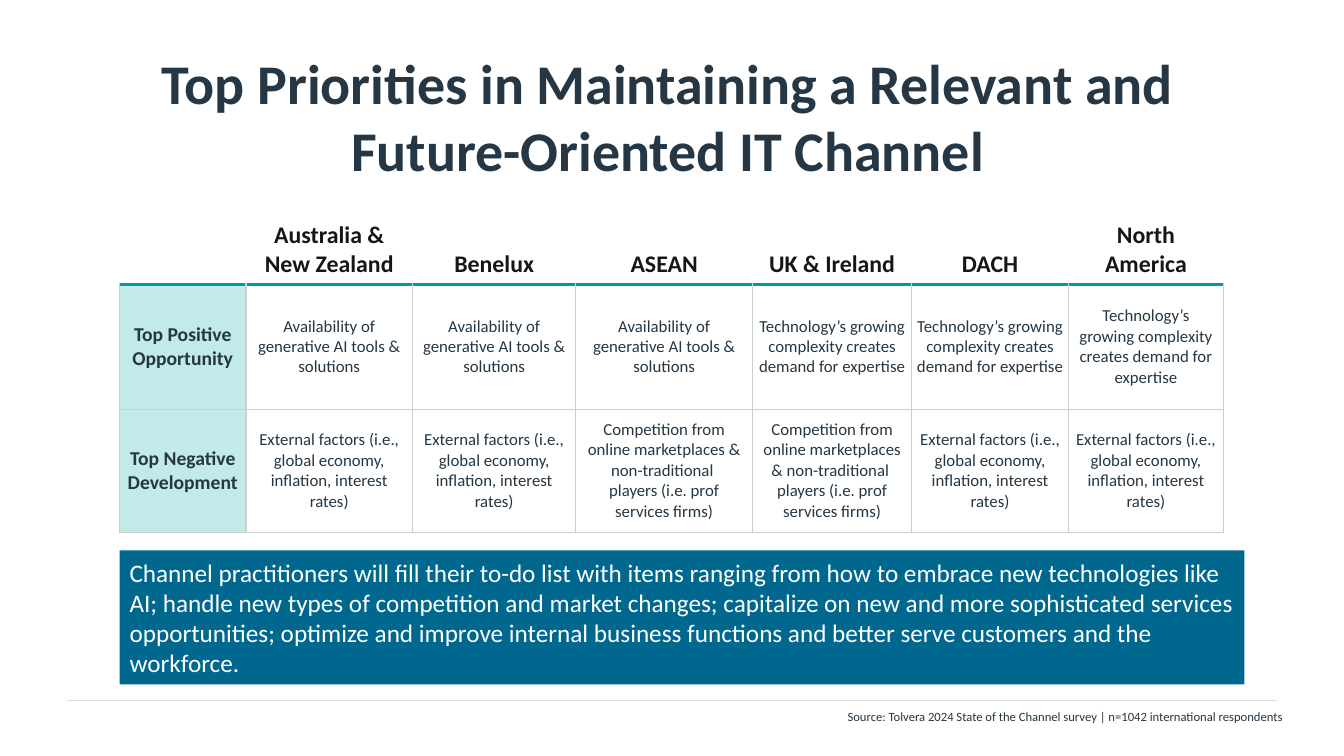
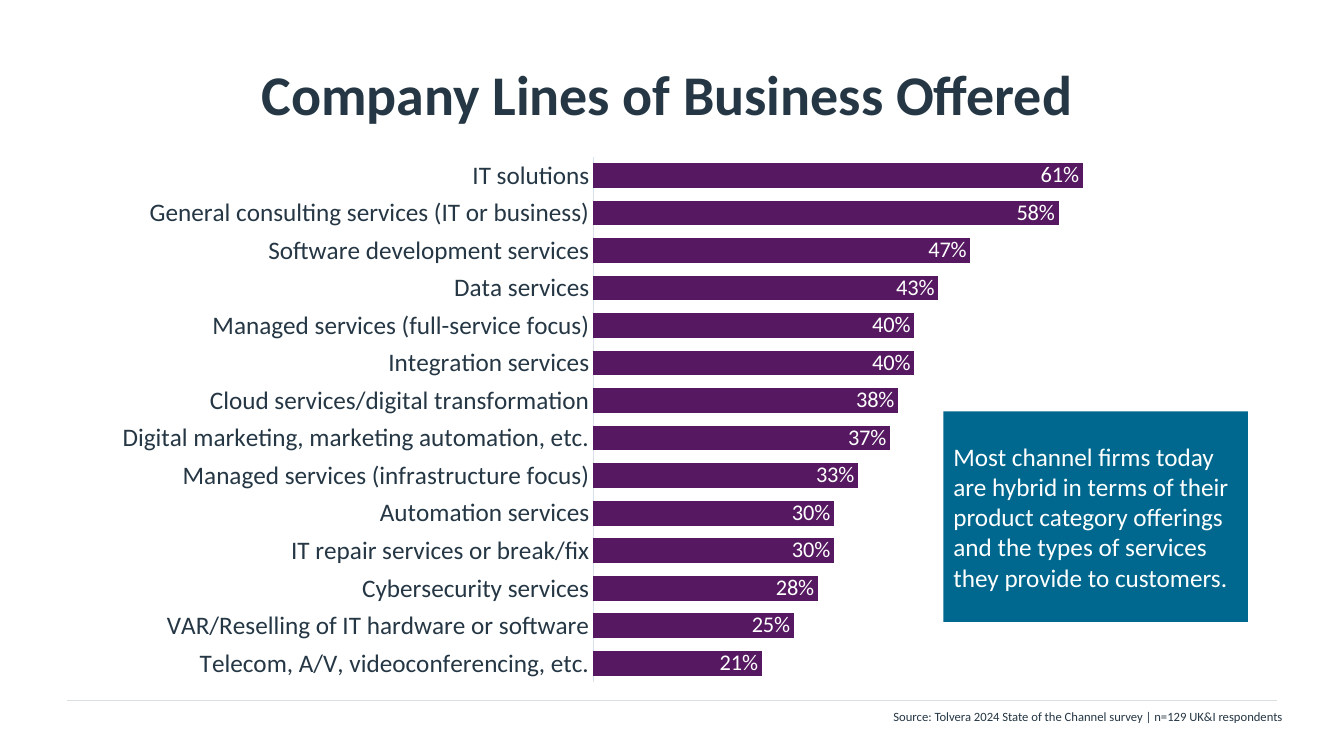
from lxml.etree import SubElement
from pptx import Presentation
from pptx.chart.data import CategoryChartData
from pptx.dml.color import RGBColor
from pptx.enum.chart import XL_CHART_TYPE, XL_LABEL_POSITION, XL_TICK_MARK
from pptx.enum.shapes import MSO_CONNECTOR, MSO_SHAPE
from pptx.enum.text import MSO_ANCHOR, MSO_AUTO_SIZE, PP_ALIGN
from pptx.oxml import parse_xml
from pptx.oxml.ns import nsdecls, qn
from pptx.util import Inches, Pt

FONT = "Calibri"
INK, BLACK, WHITE = "253644", "141718", "FEFFFE"
BLUE, TEAL, MINT, PURPLE = "00688E", "0198A7", "C1EAE9", "561961"
RULE_GREY, CELL_GREY, AXIS_GREY = "DADFE1", "C9CFD3", "D8E1EA"

prs = Presentation()
prs.slide_width, prs.slide_height = Inches(13.33), Inches(7.5)
COLUMN, ROW = prs.slide_width / 20, prs.slide_height / 30


def grid(*lengths):
    """Turn alternating column and row counts into slide lengths."""
    return [int(n * (ROW if i % 2 else COLUMN)) for i, n in enumerate(lengths)]


def paint(fill, colour):
    fill.solid()
    fill.fore_color.rgb = RGBColor.from_string(colour)


paint(prs.slide_master.background.fill, WHITE)

# Title, title box, source, callout, callout box
pages = [
    ("Top Priorities in Maintaining a Relevant and Future-Oriented IT Channel",
     (1.25, 2.08, 17.52, 5),
     "Source: Tolvera 2024 State of the Channel survey | n=1042 international respondents",
     "Channel practitioners will fill their to-do list with items ranging from how to "
     "embrace new technologies like AI; handle new types of competition and market "
     "changes; capitalize on new and more sophisticated services opportunities; optimize "
     "and improve internal business functions and better serve customers and the workforce.",
     (1.78, 21.84, 16.74, 5.32)),
    ("Company Lines of Business Offered",
     (1, 1.2, 18, 5),
     "Source: Tolvera 2024 State of the Channel survey | n=129 UK&I respondents",
     "Most channel firms today are hybrid in terms of their product category offerings "
     "and the types of services they provide to customers.",
     (14.04, 16.32, 4.53, 8.36)),
]

# Table of priorities by region
ai_tools = "Availability of generative AI tools & solutions"
complexity = "Technology’s growing complexity creates demand for expertise"
economy = "External factors (i.e., global economy, inflation, interest rates)"
competition = ("Competition from online marketplaces & non-traditional \v"
               "players (i.e. prof services firms)")
priorities = [
    ["", "Australia &\nNew Zealand", "Benelux", "ASEAN", "UK & Ireland", "DACH",
     "North America"],
    ["Top Positive Opportunity"] + [ai_tools] * 3 + [complexity] * 3,
    ["Top Negative Development"] + [economy] * 2 + [competition] * 2 + [economy] * 2,
]
region_widths = [1.88, 2.48, 2.43, 2.63, 2.37, 2.33, 2.31]
priority_heights = [4.2, 4.96, 4.88]

# Share of firms offering each line of business, lowest first
business_lines = {
    "Telecom, A/V, videoconferencing, etc.": 0.21,
    "VAR/Reselling of IT hardware or software": 0.25,
    "Cybersecurity services": 0.28,
    "IT repair services or break/fix": 0.30,
    "Automation services": 0.30,
    "Managed services (infrastructure focus)": 0.33,
    "Digital marketing, marketing automation, etc.": 0.37,
    "Cloud services/digital transformation": 0.38,
    "Integration services": 0.40,
    "Managed services (full-service focus)": 0.40,
    "Data services": 0.43,
    "Software development services": 0.47,
    "General consulting services (IT or business)": 0.58,
    "IT solutions": 0.61,
}

for page, (heading, heading_box, source_text, message, message_box) in enumerate(pages):
    slide = prs.slides.add_slide(prs.slide_layouts[5])
    shapes = slide.shapes

    rule = shapes.add_connector(MSO_CONNECTOR.STRAIGHT, *grid(1, 27.8, 19, 27.8))
    paint(rule.line.fill, RULE_GREY)
    rule.line.width = Pt(0.5)
    SubElement(rule.element.spPr, qn("a:effectLst"))

    title = shapes.title
    title.left, title.top, title.width, title.height = grid(*heading_box)
    title.text_frame.margin_left = 0

    source = shapes.add_textbox(*grid(9.5, 27.92, 9.73, 1))

    if page == 0:
        table = shapes.add_table(
            len(priorities), len(region_widths),
            *grid(1.78, 7.08, sum(region_widths), sum(priority_heights))).table
        table.first_row = table.horz_banding = False
        for column, width in zip(table.columns, region_widths):
            column.width = int(width * COLUMN)
        for row, height in zip(table.rows, priority_heights):
            row.height = int(height * ROW)

        for r, texts in enumerate(priorities):
            for c, text in enumerate(texts):
                cell = table.cell(r, c)
                cell.margin_left = cell.margin_right = Inches(0.05)
                cell.vertical_anchor = MSO_ANCHOR.MIDDLE if r else MSO_ANCHOR.BOTTOM
                cell.text_frame.text = text
                for paragraph in cell.text_frame.paragraphs:
                    paragraph.alignment = PP_ALIGN.CENTER
                    font = paragraph.font
                    font.name = FONT
                    font.size = Pt(17 if r == 0 else 14 if c == 0 else 12)
                    font.bold = r == 0 or c == 0
                    paint(font.fill, INK if r else BLACK)

                for side in "LRTB" if r else "B":
                    under_header = (r, side) in [(0, "B"), (1, "T")]
                    colour, points = (TEAL, 2.25) if under_header else (CELL_GREY, 1)
                    cell._tc.get_or_add_tcPr().append(parse_xml(
                        f'<a:ln{side} {nsdecls("a")} w="{Pt(points)}"><a:solidFill>'
                        f'<a:srgbClr val="{colour}"/></a:solidFill></a:ln{side}>'))
                if r and c == 0:
                    paint(cell.fill, MINT)
                else:
                    cell.fill.background()
    else:
        shares = CategoryChartData(number_format="0%")
        shares.categories = list(business_lines)
        shares.add_series("Series 1", list(business_lines.values()))
        chart = shapes.add_chart(
            XL_CHART_TYPE.BAR_CLUSTERED, *grid(0.83, 6.2, 16, 20.88), shares).chart
        chart.has_legend = chart.has_title = False
        chart.font.name, chart.font.size = FONT, Pt(10)
        paint(chart.font.fill, INK)

        line_axis = chart.category_axis
        line_axis.major_tick_mark = line_axis.minor_tick_mark = XL_TICK_MARK.NONE
        line_axis.has_major_gridlines = False
        line_axis.tick_labels.font.name = FONT
        line_axis.tick_labels.font.size = Pt(18)
        paint(line_axis.tick_labels.font.fill, INK)
        paint(line_axis.format.line.fill, AXIS_GREY)
        line_axis.format.line.width = Pt(0.75)

        share_axis = chart.value_axis
        share_axis.minimum_scale, share_axis.maximum_scale = 0, 0.67
        share_axis.has_major_gridlines = share_axis.visible = False

        plot = chart.plots[0]
        plot.gap_width, plot.vary_by_categories = 51, False
        paint(plot.series[0].format.fill, PURPLE)
        plot.has_data_labels = True
        labels = plot.data_labels
        labels.show_value = True
        labels.position = XL_LABEL_POSITION.INSIDE_END
        labels.number_format, labels.number_format_is_linked = "0%", False
        labels.font.name, labels.font.size = FONT, Pt(16)
        paint(labels.font.fill, WHITE)

        # Bars fill the right half of the chart, labels the left
        plot_area = chart._chartSpace.chart.plotArea
        for automatic in plot_area.findall(qn("c:layout")):
            plot_area.remove(automatic)
        plot_area.insert(0, parse_xml(
            f'<c:layout {nsdecls("c")}><c:manualLayout><c:layoutTarget val="inner"/>'
            '<c:xMode val="edge"/><c:yMode val="edge"/><c:x val="0.5"/><c:y val="0"/>'
            '<c:w val="0.5"/><c:h val="1"/></c:manualLayout></c:layout>'))

    callout = shapes.add_shape(MSO_SHAPE.RECTANGLE, *grid(*message_box))
    callout.shadow.inherit = False
    paint(callout.fill, BLUE)
    callout.line.fill.background()

    for part, text, size, colour, bold, alignment, anchor in [
        (title, heading, 40, INK, True, PP_ALIGN.CENTER, MSO_ANCHOR.MIDDLE),
        (source, source_text, 9, INK, False, PP_ALIGN.RIGHT, MSO_ANCHOR.TOP),
        (callout, message, 18, WHITE, False, PP_ALIGN.LEFT, MSO_ANCHOR.MIDDLE),
    ]:
        frame = part.text_frame
        frame.text = text
        frame.word_wrap = True
        frame.auto_size = MSO_AUTO_SIZE.NONE
        frame.vertical_anchor = anchor
        paragraph = frame.paragraphs[0]
        paragraph.alignment = alignment
        font = paragraph.font
        font.name, font.size, font.bold = FONT, Pt(size), bold
        paint(font.fill, colour)
    callout.text_frame.paragraphs[0].space_after = Pt(10)

prs.save("out.pptx")
